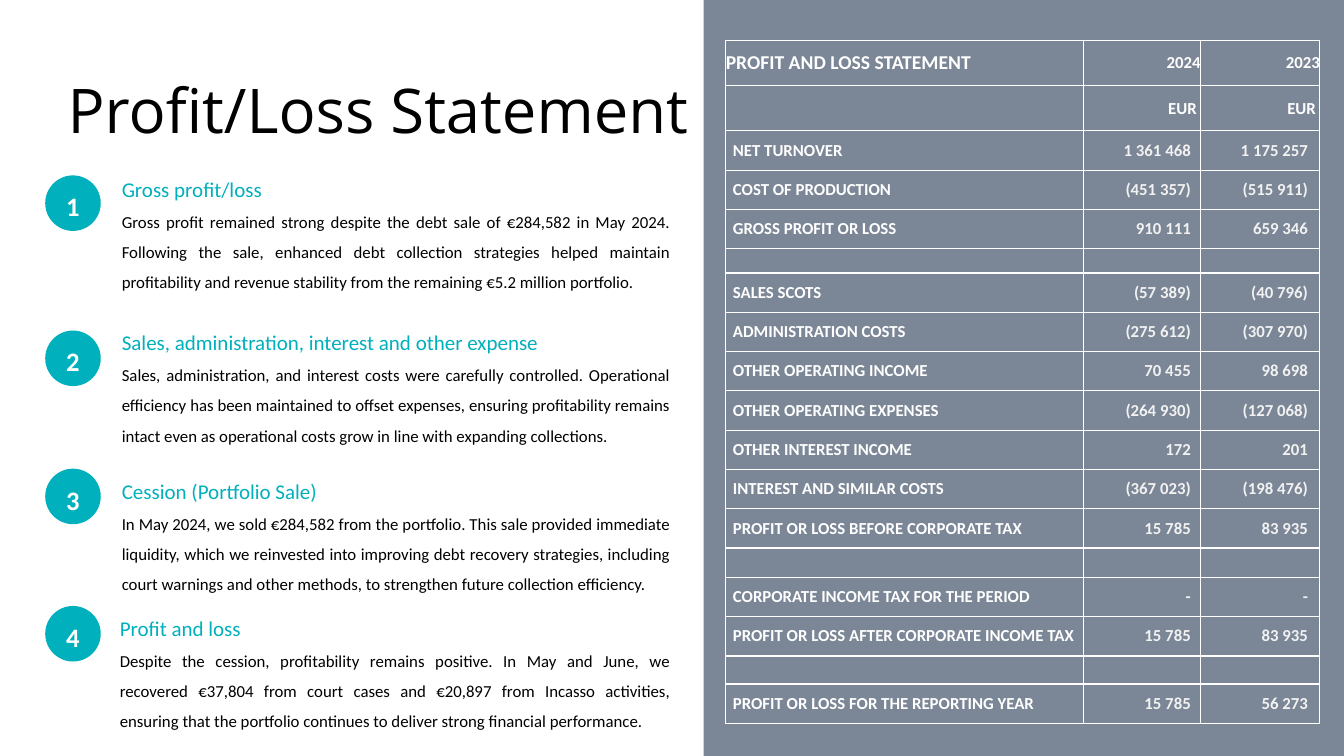
from lxml.etree import SubElement
from pptx import Presentation
from pptx.dml.color import RGBColor
from pptx.enum.shapes import MSO_SHAPE
from pptx.enum.text import MSO_ANCHOR, MSO_AUTO_SIZE, PP_ALIGN
from pptx.oxml.ns import qn
from pptx.util import Cm, Pt

WHITE = RGBColor(0xFF, 0xFF, 0xFF)
BLACK = RGBColor(0x00, 0x00, 0x00)
SLATE = RGBColor(0x44, 0x54, 0x6A)
TEAL = RGBColor(0x00, 0xB0, 0xBC)
PALE = RGBColor(0xF2, 0xF2, 0xF2)

SECTIONS = [
    ("Gross profit/loss",
     "Gross profit remained strong despite the debt sale of €284,582 in May 2024. Following the sale, "
     "enhanced debt collection strategies helped maintain profitability and revenue stability from the "
     "remaining €5.2 million portfolio.",
     4.42, 2.82, 4.32, 3.12, 1.0),
    ("Sales, administration, interest and other expense",
     "Sales, administration, and interest costs were carefully controlled. Operational efficiency has been "
     "maintained to offset expenses, ensuring profitability remains intact even as operational costs grow "
     "in line with expanding collections.",
     8.33, 2.82, 8.18, 3.12, 1.0),
    ("Cession (Portfolio Sale)",
     "In May 2024, we sold €284,582 from the portfolio. This sale provided immediate liquidity, which we "
     "reinvested into improving debt recovery strategies, including court warnings and other methods, to "
     "strengthen future collection efficiency.",
     11.81, 2.82, 11.61, 3.45, 1.5),
    ("Profit and loss",
     "Despite the cession, profitability remains positive. In May and June, we recovered €37,804 from court "
     "cases and €20,897 from Incasso activities, ensuring that the portfolio continues to deliver strong "
     "financial performance.",
     15.27, 2.77, 15.06, 3.45, 1.5),
]
SECTION_RIGHT = 17.15

HEADINGS = [("PROFIT AND LOSS STATEMENT", "2024", "2023"), ("", "EUR", "EUR")]
AMOUNTS = [
    ("NET TURNOVER", "1 361 468", "1 175 257"),
    ("COST OF PRODUCTION", "(451 357)", "(515 911)"),
    ("GROSS PROFIT OR LOSS", "910 111", "659 346"),
    ("", "", ""),
    ("SALES SCOTS", "(57 389)", "(40 796)"),
    ("ADMINISTRATION COSTS", "(275 612)", "(307 970)"),
    ("OTHER OPERATING INCOME", "70 455", "98 698"),
    ("OTHER OPERATING EXPENSES", "(264 930)", "(127 068)"),
    ("OTHER INTEREST INCOME", "172", "201"),
    ("INTEREST AND SIMILAR COSTS", "(367 023)", "(198 476)"),
    ("PROFIT OR LOSS BEFORE CORPORATE TAX", "15 785", "83 935"),
    ("", "", ""),
    ("CORPORATE INCOME TAX FOR THE PERIOD", "-", "-"),
    ("PROFIT OR LOSS AFTER CORPORATE INCOME TAX", "15 785", "83 935"),
    ("", "", ""),
    ("PROFIT OR LOSS FOR THE REPORTING YEAR", "15 785", "56 273"),
]
COLUMN_WIDTHS = [9.02, 2.95, 3.0]
HEADING_HEIGHT, AMOUNT_HEIGHT = 1.14, 0.99
GAP_HEIGHTS = {5: 0.61, 13: 0.74, 16: 0.71}


class StatementSlide:
    """Draws the statement's elements on one slide in a shared style."""

    def __init__(self, slide, font="Calibri", title_font="Open Sans"):
        self.slide = slide
        self.font = font
        self.title_font = title_font

    def format(self, paragraph, size, color, bold=False, align=PP_ALIGN.LEFT, spacing=1.0, font=None):
        paragraph.alignment = align
        paragraph.line_spacing = spacing
        for run in paragraph.runs:
            run.font.name = font or self.font
            run.font.size = Pt(size)
            run.font.bold = bold
            run.font.color.rgb = color

    def title(self, text, left, top, width, height):
        title = self.slide.shapes.title
        title.left, title.top, title.width, title.height = Cm(left), Cm(top), Cm(width), Cm(height)
        frame = title.text_frame
        frame.text = text
        frame.auto_size = MSO_AUTO_SIZE.NONE
        frame.vertical_anchor = MSO_ANCHOR.MIDDLE
        self.format(frame.paragraphs[0], 44, BLACK, spacing=0.9, font=self.title_font)

    def filled(self, kind, left, top, width, height, color):
        shape = self.slide.shapes.add_shape(kind, Cm(left), Cm(top), Cm(width), Cm(height))
        shape.shadow.inherit = False
        shape.fill.solid()
        shape.fill.fore_color.rgb = color
        shape.line.fill.background()
        return shape

    def panel(self, left, top, width, height, opacity):
        panel = self.filled(MSO_SHAPE.RECTANGLE, left, top, width, height, SLATE)
        tint = panel.fill._xPr.find(".//" + qn("a:srgbClr"))
        SubElement(tint, qn("a:alpha"), val=str(opacity * 1000))

    def badge(self, number, left, top, diameter):
        frame = self.filled(MSO_SHAPE.OVAL, left, top, diameter, diameter, TEAL).text_frame
        frame.margin_left = frame.margin_right = frame.margin_bottom = 0
        frame.margin_top = Cm(0.15)
        frame.vertical_anchor = MSO_ANCHOR.MIDDLE
        frame.text = str(number)
        self.format(frame.paragraphs[0], 19, WHITE, True, PP_ALIGN.CENTER)

    def section(self, heading, body, left, top, width, height, heading_spacing):
        frame = self.slide.shapes.add_textbox(Cm(left), Cm(top), Cm(width), Cm(height)).text_frame
        frame.word_wrap = True
        frame.auto_size = MSO_AUTO_SIZE.SHAPE_TO_FIT_TEXT
        frame.text = f"{heading}\n{body}"
        heading_line, body_lines = frame.paragraphs
        self.format(heading_line, 15, TEAL, align=PP_ALIGN.JUSTIFY, spacing=heading_spacing)
        self.format(body_lines, 12, BLACK, align=PP_ALIGN.JUSTIFY, spacing=1.5)

    def cell(self, cell, text, size, color, align, left=0, right=0):
        cell.fill.background()
        cell.margin_top = cell.margin_bottom = 0
        cell.margin_left, cell.margin_right = Cm(left), Cm(right)
        cell.vertical_anchor = MSO_ANCHOR.MIDDLE
        cell.text = text
        paragraph = cell.text_frame.paragraphs[0]
        self.format(paragraph, size, color, True, align)
        if not text:
            SubElement(paragraph._p, qn("a:endParaRPr"), sz=str(size * 100))

    def statement(self, left, top):
        lines = HEADINGS + AMOUNTS
        heights = [HEADING_HEIGHT if row < len(HEADINGS) else GAP_HEIGHTS.get(row, AMOUNT_HEIGHT)
                   for row in range(len(lines))]
        table = self.slide.shapes.add_table(len(lines), len(COLUMN_WIDTHS), Cm(left), Cm(top),
                                            Cm(sum(COLUMN_WIDTHS)), Cm(sum(heights))).table
        table.first_row = table.horz_banding = False
        for column, width in zip(table.columns, COLUMN_WIDTHS):
            column.width = Cm(width)
        for row, (label, *values) in enumerate(lines):
            table.rows[row].height = Cm(heights[row])
            is_heading = row < len(HEADINGS)
            self.cell(table.cell(row, 0), label, 14 if row == 0 else 12, WHITE, PP_ALIGN.LEFT,
                      left=0 if is_heading else 0.18)
            for column, value in enumerate(values, 1):
                inset = 0.1 * row if is_heading else 0.2 + 0.05 * column
                self.cell(table.cell(row, column), value, 12, WHITE if is_heading else PALE,
                          PP_ALIGN.RIGHT, right=inset)


def main():
    presentation = Presentation()
    presentation.slide_width, presentation.slide_height = Cm(33.87), Cm(19.05)
    page = StatementSlide(presentation.slides.add_slide(presentation.slide_layouts[5]))
    page.panel(17.73, 0, 16.14, 19.05, opacity=70)
    page.title("Profit/Loss Statement", 1.45, 1.02, 29.21, 3.68)
    page.statement(18.29, 1.02)
    for number, (heading, body, badge_top, left, top, height, spacing) in enumerate(SECTIONS, 1):
        page.badge(number, 1.14, badge_top, 1.4)
        page.section(heading, body, left, top, SECTION_RIGHT - left, height, spacing)
    presentation.save("out.pptx")


if __name__ == "__main__":
    main()
